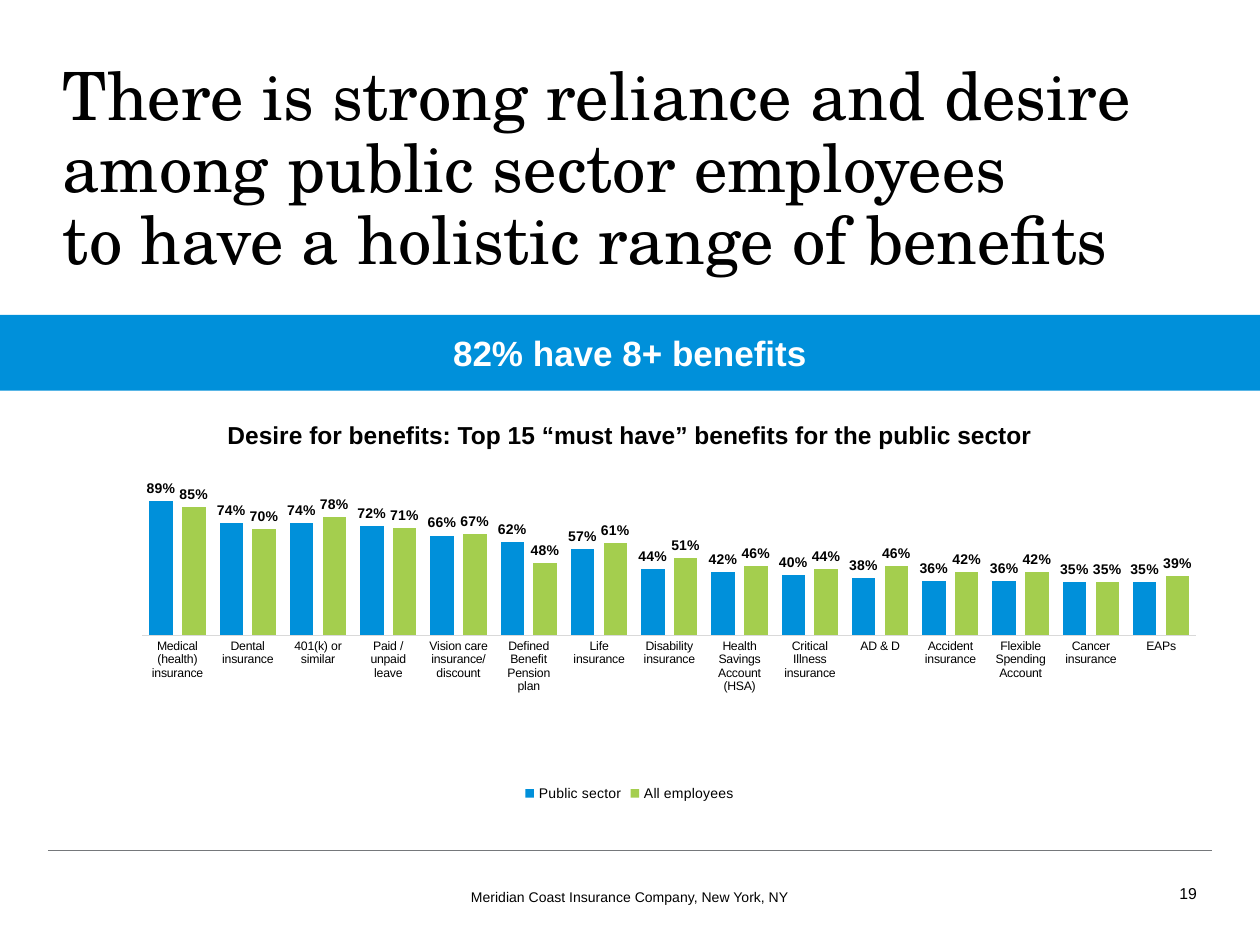
from dataclasses import dataclass

from lxml import etree
from pptx import Presentation
from pptx.chart.data import CategoryChartData
from pptx.dml.color import RGBColor
from pptx.enum.chart import XL_CHART_TYPE, XL_LABEL_POSITION, XL_LEGEND_POSITION, XL_TICK_MARK
from pptx.enum.shapes import MSO_CONNECTOR, MSO_SHAPE
from pptx.enum.text import MSO_ANCHOR, PP_ALIGN
from pptx.oxml import parse_xml
from pptx.oxml.ns import nsdecls, qn
from pptx.util import Inches, Pt

LEFT, CENTER, RIGHT = PP_ALIGN.LEFT, PP_ALIGN.CENTER, PP_ALIGN.RIGHT
TOP, MIDDLE = MSO_ANCHOR.TOP, MSO_ANCHOR.MIDDLE

TITLE = ["There is strong reliance and desire among public sector employees ",
         "to have a holistic range of benefits"]
BANNER = "82% have 8+ benefits"
CHART_TITLE = "Desire for benefits: Top 15 “must have” benefits for the public sector"
FOOTER = "Meridian Coast Insurance Company, New York, NY"
PAGE = "19"

SERIES = ("Public sector", "All employees")
BENEFITS = [
    ("Medical (health) insurance", 0.89, 0.85),
    ("Dental insurance", 0.74, 0.70),
    ("401(k) or similar", 0.74, 0.78),
    ("Paid / unpaid leave", 0.72, 0.71),
    ("Vision care insurance/discount", 0.66, 0.67),
    ("Defined Benefit Pension plan", 0.62, 0.48),
    ("Life insurance", 0.57, 0.61),
    ("Disability insurance", 0.44, 0.51),
    ("Health Savings Account (HSA)", 0.42, 0.46),
    ("Critical Illness insurance", 0.40, 0.44),
    ("AD & D", 0.38, 0.46),
    ("Accident insurance", 0.36, 0.42),
    ("Flexible Spending Account", 0.36, 0.42),
    ("Cancer insurance", 0.35, 0.35),
    ("EAPs", 0.35, 0.39),
]


@dataclass(frozen=True)
class Theme:
    sans: str = "Arial"
    serif: str = "TeX Gyre Schola"
    black: str = "000000"
    white: str = "FFFFFF"
    blue: str = "0090DA"
    green: str = "A4CE4E"
    rule: str = "75787B"
    axis: str = "D9D9D9"
    title: int = 38
    banner: int = 20
    heading: int = 14
    page: int = 9
    small: int = 8
    category: int = 7


T = Theme()
WIDTH, HEIGHT = 10, 7.5
MARGIN = WIDTH * 0.05
BODY = WIDTH - 2 * MARGIN
RULE_INSET = 0.38
PLOT = {"x": 0.07, "y": 0.02, "w": 0.93, "h": 0.46}


def color(code):
    return RGBColor.from_string(code)


def style_font(font, size, code=T.black, bold=False, name=T.sans):
    font.name, font.size, font.bold = name, Pt(size), bold
    font.color.rgb = color(code)


def write(sp, lines, size, code=T.black, bold=False, name=T.sans, align=LEFT,
          anchor=TOP, insets=(0, 0), spacing=None, wrap=True):
    """Fill a shape with one paragraph; several lines are joined by line breaks."""
    tf = sp.text_frame
    tf.word_wrap, tf.vertical_anchor = wrap, anchor
    tf.margin_left = tf.margin_right = Inches(insets[0])
    tf.margin_top = tf.margin_bottom = Inches(insets[1])
    p = tf.paragraphs[0]
    p.alignment, p.line_spacing = align, spacing
    for i, line in enumerate([lines] if isinstance(lines, str) else lines):
        if i:
            p.add_line_break()
        r = p.add_run()
        r.text = line
        style_font(r.font, size, code, bold, name)


def add_text(s, box, lines, size, **fmt):
    write(s.shapes.add_textbox(*map(Inches, box)), lines, size, **fmt)


def add_rule(s, y):
    line = s.shapes.add_connector(MSO_CONNECTOR.STRAIGHT, Inches(RULE_INSET), Inches(y),
                                  Inches(WIDTH - RULE_INSET), Inches(y))
    line.line.color.rgb, line.line.width = color(T.rule), Pt(0.75)
    etree.SubElement(line._element.spPr, qn("a:effectLst"))


def add_banner(s, y, h):
    sp = s.shapes.add_shape(MSO_SHAPE.RECTANGLE, 0, Inches(y), Inches(WIDTH), Inches(h))
    sp.shadow.inherit = False
    sp.fill.solid()
    sp.fill.fore_color.rgb = color(T.blue)
    sp.line.fill.background()
    write(sp, BANNER, T.banner, code=T.white, bold=True, align=CENTER,
          anchor=MIDDLE, insets=(MARGIN, 0.05))


def set_plot_area(chart):
    """Fix the inner plot area as shares of the chart's size."""
    area = chart._chartSpace.chart.plotArea
    for old in area.findall(qn("c:layout")):
        area.remove(old)
    sizes = "".join(f'<c:{k} val="{v}"/>' for k, v in PLOT.items())
    area.insert(0, parse_xml(
        f'<c:layout {nsdecls("c")}><c:manualLayout><c:layoutTarget val="inner"/>'
        f'<c:xMode val="edge"/><c:yMode val="edge"/>{sizes}</c:manualLayout></c:layout>'))


def add_benefits_chart(s, box):
    names, *columns = zip(*BENEFITS)
    data = CategoryChartData(number_format="0%")
    data.categories = names
    for name, values in zip(SERIES, columns):
        data.add_series(name, values)
    chart = s.shapes.add_chart(XL_CHART_TYPE.COLUMN_CLUSTERED, *map(Inches, box), data).chart
    style_font(chart.font, T.small)
    chart.has_title = False
    chart.has_legend = True
    chart.legend.position = XL_LEGEND_POSITION.BOTTOM
    chart.legend.include_in_layout = False
    style_font(chart.legend.font, T.small)

    cat, val = chart.category_axis, chart.value_axis
    cat.major_tick_mark = XL_TICK_MARK.NONE
    cat.format.line.color.rgb, cat.format.line.width = color(T.axis), Pt(0.75)
    style_font(cat.tick_labels.font, T.category)
    val.minimum_scale, val.maximum_scale = 0, 1
    val.has_major_gridlines = False
    val.visible = False

    plot = chart.plots[0]
    plot.vary_by_categories = False
    plot.gap_width, plot.overlap = 60, -40
    for series, code in zip(plot.series, (T.blue, T.green)):
        series.format.fill.solid()
        series.format.fill.fore_color.rgb = color(code)
        labels = series.data_labels
        labels.show_value = True
        labels.number_format, labels.number_format_is_linked = "0%", False
        labels.position = XL_LABEL_POSITION.OUTSIDE_END
        style_font(labels.font, T.small, bold=True)
    set_plot_area(chart)


def main():
    prs = Presentation()
    prs.slide_width, prs.slide_height = Inches(WIDTH), Inches(HEIGHT)
    s = prs.slides.add_slide(prs.slide_layouts[6])
    add_rule(s, HEIGHT * 0.9)
    add_text(s, (9.2, 6.96, 0.3, 0.25), PAGE, T.page, align=RIGHT, anchor=MIDDLE,
             insets=(0, 0.05))
    add_text(s, (3.56, 7, 2.88, 0.24), FOOTER, T.small, align=CENTER,
             insets=(0.1, 0.05), wrap=False)
    add_text(s, (MARGIN, 0.5, BODY, 1.1), TITLE, T.title, name=T.serif, spacing=0.9)
    add_benefits_chart(s, (MARGIN, 3.79, BODY, 2.61))
    add_text(s, (MARGIN, 3.33, BODY, 0.26), CHART_TITLE, T.heading, bold=True, align=CENTER)
    add_banner(s, HEIGHT / 3, 0.6)
    prs.save("out.pptx")


if __name__ == "__main__":
    main()
